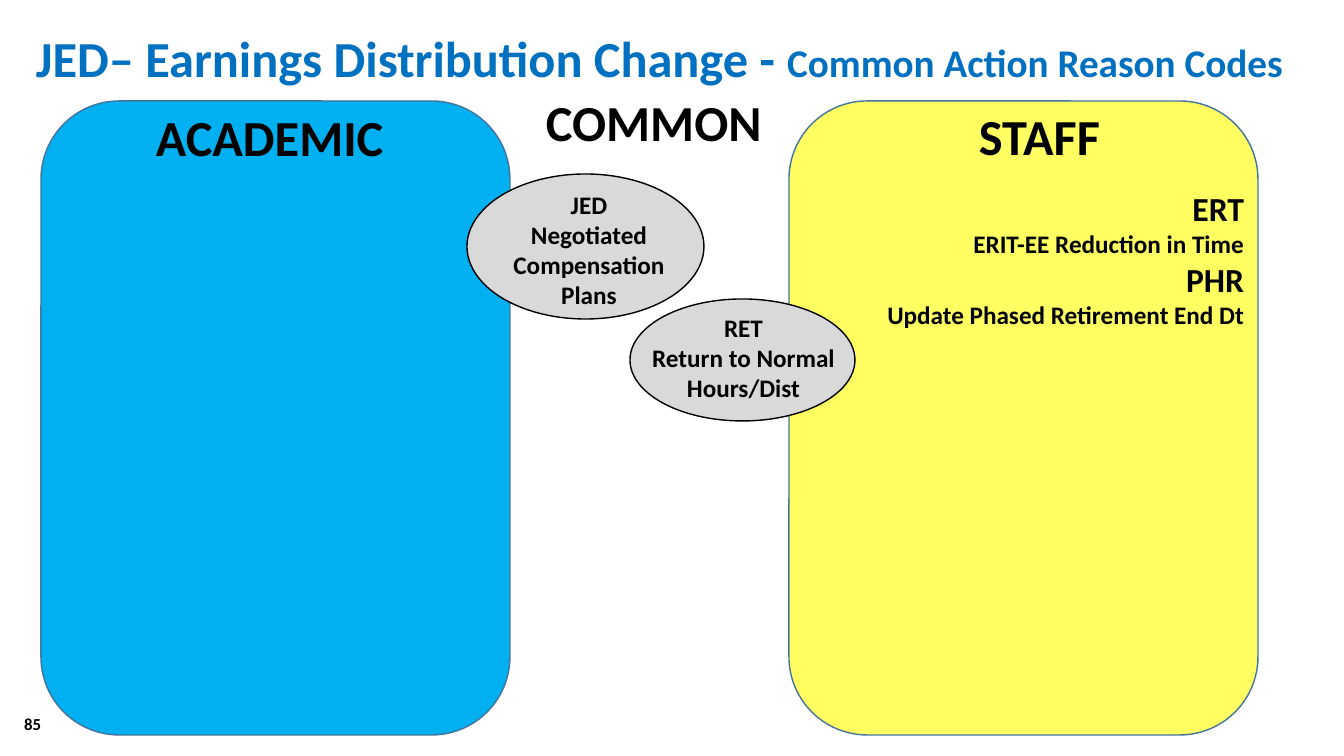
import pptx
import pptx.dml.color
import pptx.enum.shapes
import pptx.enum.text
import pptx.oxml
import pptx.oxml.ns
import pptx.util

RGBColor = pptx.dml.color.RGBColor
SHAPE = pptx.enum.shapes.MSO_SHAPE
ALIGN = pptx.enum.text.PP_ALIGN
ANCHOR = pptx.enum.text.MSO_ANCHOR

BLACK = RGBColor(0x00, 0x00, 0x00)
TITLE_BLUE = RGBColor(0x00, 0x70, 0xC0)
ACADEMIC_BLUE = RGBColor(0x00, 0xB0, 0xF0)
STAFF_YELLOW = RGBColor(0xFF, 0xFF, 0x00)
PANEL_EDGE = RGBColor(0x43, 0x73, 0x9E)
CODE_GREY = RGBColor(0xD9, 0xD9, 0xD9)


def px(n):
    return round(n * 914400 / 100.8)


class SlideBuilder:
    font = "Calibri"

    def __init__(self, prs):
        self.slide = prs.slides.add_slide(prs.slide_layouts[6])

    def shape(self, kind, box, fill, line, opacity=100):
        sp = self.slide.shapes.add_shape(kind, *map(px, box))
        sp.shadow.inherit = False
        sp.fill.solid()
        sp.fill.fore_color.rgb = fill
        sp.line.color.rgb = line
        sp.line.width = pptx.util.Pt(1)
        if opacity < 100:
            color = sp.fill._xPr.find(".//" + pptx.oxml.ns.qn("a:srgbClr"))
            alpha = pptx.oxml.parse_xml(
                "<a:alpha %s val='%d'/>" % (pptx.oxml.ns.nsdecls("a"), opacity * 1000))
            color.append(alpha)
        return sp

    def text(self, box, paragraphs, align=ALIGN.LEFT, color=BLACK, anchor=ANCHOR.TOP):
        """Each paragraph is a list of (words, size) runs."""
        sp = self.slide.shapes.add_textbox(*map(px, box))
        tf = sp.text_frame
        tf.word_wrap = True
        tf.vertical_anchor = anchor
        for i, runs in enumerate(paragraphs):
            p = tf.add_paragraph() if i else tf.paragraphs[0]
            p.alignment = align
            for words, size in runs:
                r = p.add_run()
                r.text = words
                r.font.name = self.font
                r.font.size = pptx.util.Pt(size)
                r.font.bold = True
                r.font.color.rgb = color
        return sp

    def code_bubble(self, box, text_box, code, meaning):
        oval = self.shape(SHAPE.OVAL, box, CODE_GREY, BLACK)
        label = self.text(text_box, [[(code, 18)], [(meaning, 18)]], ALIGN.CENTER)
        self.slide.shapes.add_group_shape([oval, label])


def main():
    prs = pptx.Presentation()
    prs.slide_width, prs.slide_height = px(1344), px(756)
    s = SlideBuilder(prs)

    # Staff and academic panels
    s.shape(SHAPE.ROUNDED_RECTANGLE, (789, 101, 469, 634), STAFF_YELLOW, PANEL_EDGE, 62)
    s.shape(SHAPE.ROUNDED_RECTANGLE, (41, 101, 469, 634), ACADEMIC_BLUE, PANEL_EDGE)

    # Title
    s.text((26, 22, 1275, 72),
           [[("JED– Earnings Distribution Change - ", 36), ("Common Action Reason Codes", 28)]],
           color=TITLE_BLUE)

    # Staff-only codes
    staff_codes = [("ERT", "ERIT-EE Reduction in Time"),
                   ("PHR", "Update Phased Retirement End Dt")]
    lines = [[run] for code, meaning in staff_codes for run in ((code, 24), (meaning, 18))]
    s.text((786, 183, 468, 261), lines, ALIGN.RIGHT)

    # Column headings
    for heading, box, align in [("STAFF", (927, 100, 225, 72), ALIGN.CENTER),
                                ("ACADEMIC", (146, 101, 259, 72), ALIGN.LEFT),
                                ("COMMON", (536, 86, 259, 72), ALIGN.LEFT)]:
        s.text(box, [[(heading, 36)]], align)

    # Shared codes
    s.code_bubble((467, 174, 237, 145), (490, 184, 198, 146),
                  "JED", "Negotiated Compensation Plans")
    s.code_bubble((630, 299, 225, 122), (617, 307, 253, 102),
                  "RET", "Return to Normal Hours/Dist")

    # Slide number
    s.text((1, 707, 50, 34), [[("85", 12)]], ALIGN.RIGHT, anchor=ANCHOR.MIDDLE)

    prs.save("out.pptx")


if __name__ == "__main__":
    main()
